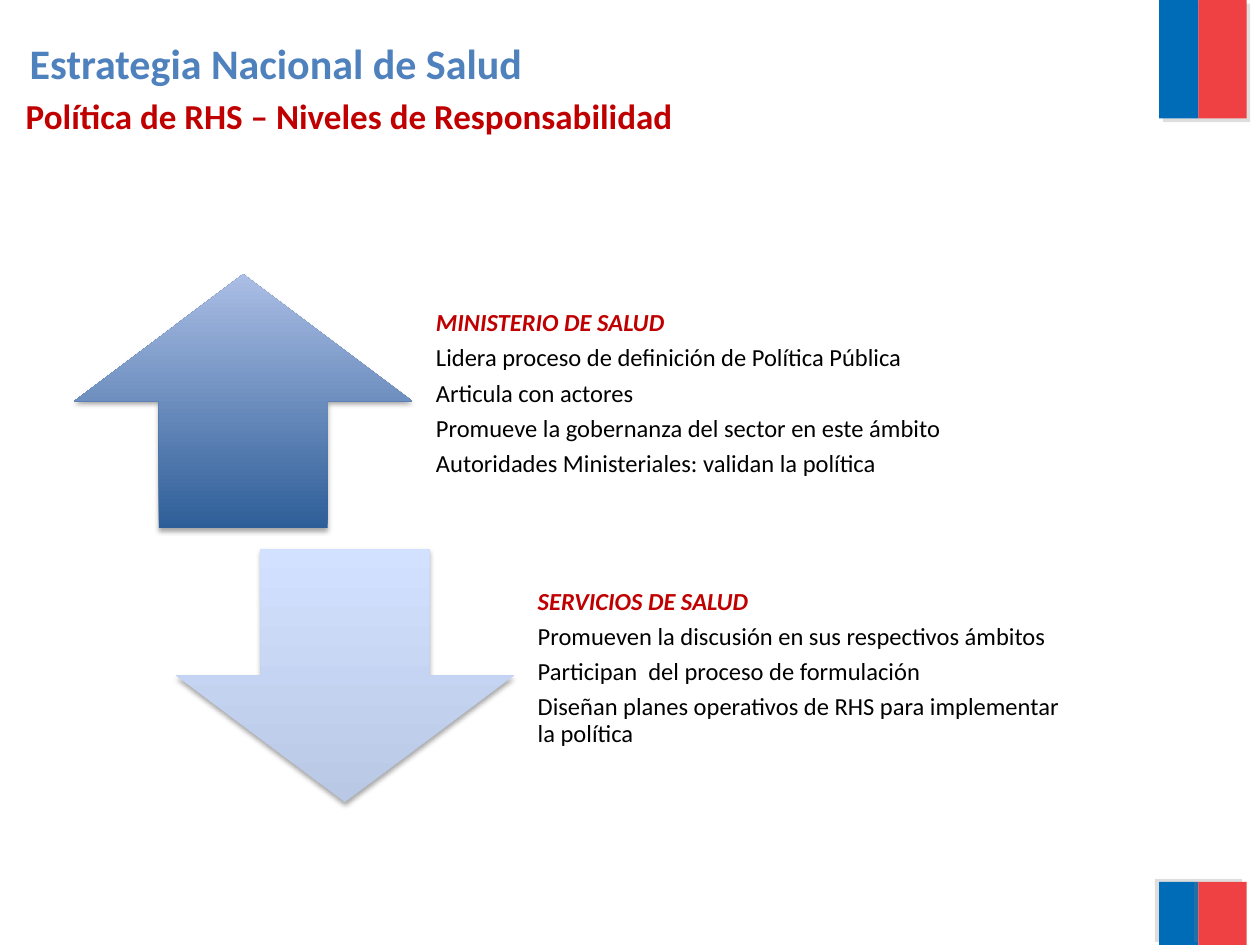
from lxml.etree import SubElement
from pptx import Presentation
from pptx.dml.color import RGBColor
from pptx.enum.shapes import MSO_SHAPE as Shape
from pptx.enum.text import MSO_ANCHOR as Anchor
from pptx.oxml.ns import qn
from pptx.util import Cm, Pt

BLUE, RED = "006CB7", "EF4144"
HEADING, BLACK = "C00000", "000000"


def rgb(value):
    return RGBColor.from_string(value)


def add_shadow(shape, color, alpha, blur, distance, angle):
    shape.shadow.inherit = False
    effects = shape._element.spPr.find(qn("a:effectLst"))
    outer = SubElement(effects, qn("a:outerShdw"), blurRad=str(Pt(blur)),
                       dist=str(Pt(distance)), dir=str(angle * 60000),
                       algn="ctr", rotWithShape="0")
    tint = SubElement(outer, qn("a:srgbClr"), val=color)
    SubElement(tint, qn("a:alpha"), val=str(alpha * 1000))


def add_text(frame, text, first=False, size=14, color=BLACK, bold=False,
             italic=False, spacing=None, before=0, after=0, margin=0):
    paragraph = frame.paragraphs[0] if first else frame.add_paragraph()
    paragraph.line_spacing = spacing
    paragraph.space_before, paragraph.space_after = Pt(before), Pt(after)
    if margin:
        paragraph._p.get_or_add_pPr().set("marL", str(Cm(margin)))
    run = paragraph.add_run()
    run.text = text
    font = run.font
    font.name, font.size, font.bold, font.italic = "Calibri", Pt(size), bold, italic
    font.color.rgb = rgb(color)


def add_frame(slide, left, top, width, height, insets, anchor=Anchor.TOP):
    frame = slide.shapes.add_textbox(Cm(left), Cm(top), Cm(width), Cm(height)).text_frame
    frame.word_wrap = True
    frame.vertical_anchor = anchor
    (frame.margin_left, frame.margin_top,
     frame.margin_right, frame.margin_bottom) = map(Cm, insets)
    return frame


def add_flag(slide, left, top, height, shadow_angle):
    blue_width, red_width = 0.79, 0.97
    for offset, width, color in ((0, blue_width, BLUE), (blue_width, red_width, RED)):
        band = slide.shapes.add_shape(Shape.RECTANGLE, Cm(left + offset), Cm(top),
                                      Cm(width), Cm(height))
        band.fill.solid()
        band.fill.fore_color.rgb = rgb(color)
        band.line.fill.background()
        add_shadow(band, "808080", 25, 0, 3, shadow_angle)


def add_level(slide, left, top, direction, gradient, heading, duties):
    arrow_width, height, gap = 6.81, 5.11, 0.2
    arrow = slide.shapes.add_shape(direction, Cm(left), Cm(top),
                                   Cm(arrow_width), Cm(height))
    arrow.fill.gradient()
    arrow.fill.gradient_angle = 90
    for stop, color in zip(arrow.fill.gradient_stops, gradient):
        stop.color.rgb = rgb(color)
    arrow.line.fill.background()
    add_shadow(arrow, "000000", 35, 3.1, 1.8, 90)

    frame = add_frame(slide, left + arrow_width + gap, top, 11.53, height,
                      (0.28, 0, 0.28, 0.28), Anchor.MIDDLE)
    rhythm = {"spacing": 0.9, "after": 4.9}
    add_text(frame, heading, first=True, color=HEADING, bold=True, italic=True, **rhythm)
    for duty in duties:
        add_text(frame, duty, **rhythm)


def add_title(slide, left, top, width, height):
    frame = add_frame(slide, left, top, width, height, (0.25, 0.22, 0.25, 0.13))
    add_text(frame, "Estrategia Nacional de Salud", first=True, size=24,
             color="4F81BD", bold=True, margin=0.25)
    add_text(frame, "Política de RHS – Niveles de Responsabilidad", size=20,
             color=HEADING, bold=True, before=3.8, margin=0.17)


def main():
    deck = Presentation()
    deck.slide_width, deck.slide_height = Cm(25.4), Cm(19.05)
    slide = deck.slides.add_slide(deck.slide_layouts[6])
    add_flag(slide, 23.37, 0, 2.39, 45)
    add_flag(slide, 23.37, 17.78, 1.27, 215)
    add_level(slide, 1.5, 5.53, Shape.UP_ARROW, ("2E5E98", "ABBEE5"),
              "MINISTERIO DE SALUD",
              ("Lidera proceso de definición de Política Pública",
               "Articula con actores",
               "Promueve la gobernanza del sector en este ámbito",
               "Autoridades Ministeriales: validan la política"))
    add_level(slide, 3.55, 11.06, Shape.DOWN_ARROW, ("B9C8E4", "D2E1FF"),
              "SERVICIOS DE SALUD",
              ("Promueven la discusión en sus respectivos ámbitos",
               "Participan  del proceso de formulación",
               "Diseñan planes operativos de RHS para implementar la política"))
    add_title(slide, 0.1, 0.53, 25.02, 3.51)
    deck.save("out.pptx")


if __name__ == "__main__":
    main()
